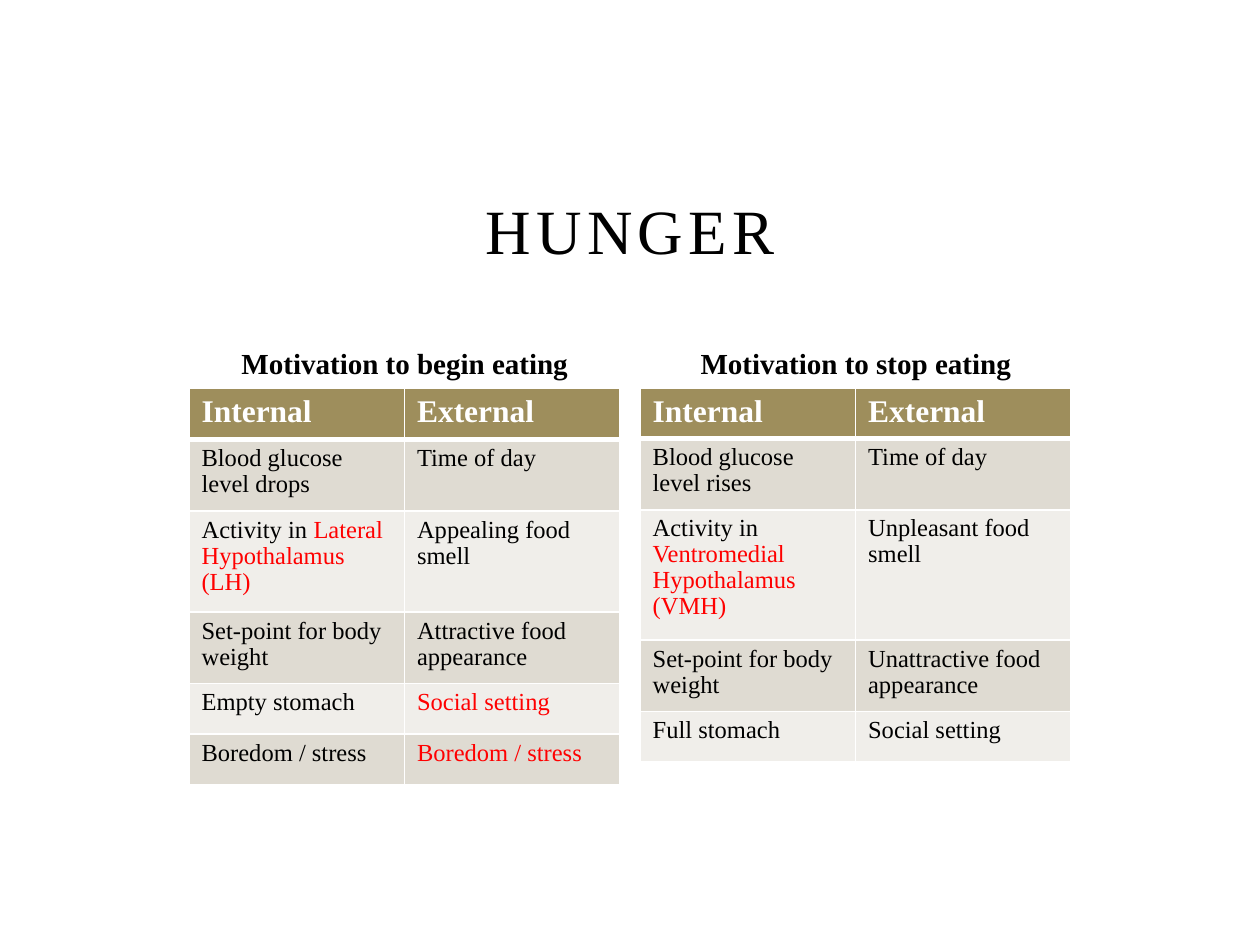
from dataclasses import dataclass
from typing import Optional

from lxml.etree import SubElement
from pptx import Presentation
from pptx.dml.color import RGBColor
from pptx.enum.text import MSO_ANCHOR as Anchor, PP_ALIGN as Align
from pptx.oxml.ns import qn
from pptx.util import Pt

FONT = "Times New Roman"
BLACK = RGBColor(0x00, 0x00, 0x00)
WHITE = RGBColor(0xFF, 0xFF, 0xFF)
RED = RGBColor(0xFF, 0x00, 0x00)
OLIVE = RGBColor(0x9E, 0x8E, 0x5C)
BANDS = (RGBColor(0xDF, 0xDB, 0xD2), RGBColor(0xF0, 0xEE, 0xEA))

LEFT, RIGHT = 108, 365.76
TABLE_TOP, TABLE_WIDTH = 221.76, 246.24
CAPTION_TOP, CAPTION_HEIGHT = 185.76, 35.28
HEADINGS = ("Internal", "External")


@dataclass(frozen=True)
class Entry:
    plain: str = ""
    marked: str = ""


@dataclass(frozen=True)
class Row:
    height: float
    internal: Entry
    external: Entry


@dataclass(frozen=True)
class Panel:
    caption: str
    left: float
    header_height: float
    rows: tuple[Row, ...]


PANELS = (
    Panel("Motivation to begin eating", LEFT, 29.5, (
        Row(40.8, Entry("Blood glucose level drops"), Entry("Time of day")),
        Row(57.7, Entry("Activity in ", "Lateral Hypothalamus (LH)"), Entry("Appealing food smell")),
        Row(40.8, Entry("Set-point for body weight"), Entry("Attractive food appearance")),
        Row(29, Entry("Empty stomach"), Entry(marked="Social setting")),
        Row(29, Entry("Boredom / stress"), Entry(marked="Boredom / stress")),
    )),
    Panel("Motivation to stop eating", RIGHT, 29, (
        Row(40.6, Entry("Blood glucose level rises"), Entry("Time of day")),
        Row(74.4, Entry("Activity in ", "Ventromedial Hypothalamus (VMH)"), Entry("Unpleasant food smell")),
        Row(40.8, Entry("Set-point for body weight"), Entry("Unattractive food appearance")),
        Row(29, Entry("Full stomach"), Entry("Social setting")),
    )),
)


def add_span(para, text: str, *, size: float, color: RGBColor = BLACK,
             bold: bool = False, tracking: float = 0) -> None:
    span = para.add_run()
    span.text = text
    span.font.name = FONT
    span.font.size = Pt(size)
    span.font.bold = bold
    span.font.color.rgb = color
    if tracking:
        span.font._element.set("spc", str(round(tracking * 100)))


def add_label(page, text: str, left: float, top: float, width: float, height: float,
              *, line_spacing: Optional[float] = None, **font) -> None:
    box = page.shapes.add_textbox(Pt(left), Pt(top), Pt(width), Pt(height))
    box.text_frame.word_wrap = True
    box.text_frame.vertical_anchor = Anchor.BOTTOM
    para = box.text_frame.paragraphs[0]
    para.alignment = Align.CENTER
    if line_spacing:
        para.line_spacing = line_spacing
    add_span(para, text, **font)


def paint_cell(cell, fill: RGBColor, top: float, bottom: float) -> None:
    properties = cell._tc.get_or_add_tcPr()
    for side, width in (("L", 1), ("R", 1), ("T", top), ("B", bottom)):
        line = SubElement(properties, qn(f"a:ln{side}"), w=str(Pt(width)))
        SubElement(SubElement(line, qn("a:solidFill")), qn("a:srgbClr"), val=str(WHITE))
    cell.fill.solid()
    cell.fill.fore_color.rgb = fill


def add_panel(page, panel: Panel) -> None:
    heights = [panel.header_height, *(row.height for row in panel.rows)]
    table = page.shapes.add_table(
        len(heights), len(HEADINGS), Pt(panel.left), Pt(TABLE_TOP),
        Pt(TABLE_WIDTH), Pt(sum(heights))).table
    for table_row, height in zip(table.rows, heights):
        table_row.height = Pt(height)
    for column, heading in enumerate(HEADINGS):
        cell = table.cell(0, column)
        paint_cell(cell, OLIVE, 1, 3)
        add_span(cell.text_frame.paragraphs[0], heading, size=18, color=WHITE, bold=True)
    for number, row in enumerate(panel.rows, 1):
        for column, entry in enumerate((row.internal, row.external)):
            cell = table.cell(number, column)
            paint_cell(cell, BANDS[(number - 1) % 2], 3 if number == 1 else 1, 1)
            para = cell.text_frame.paragraphs[0]
            para.line_spacing = 0.96
            for text, color in ((entry.plain, BLACK), (entry.marked, RED)):
                if text:
                    add_span(para, text, size=14, color=color)
    add_label(page, panel.caption, panel.left, CAPTION_TOP, TABLE_WIDTH, CAPTION_HEIGHT,
              line_spacing=1.3, size=16.6, bold=True)


def main() -> None:
    deck = Presentation()
    deck.slide_width, deck.slide_height = Pt(720), Pt(540)
    page = deck.slides.add_slide(deck.slide_layouts[6])
    add_label(page, "HUNGER", LEFT, 102.24, 504, 54, size=36, tracking=3)
    for panel in PANELS:
        add_panel(page, panel)
    deck.save("out.pptx")


if __name__ == "__main__":
    main()
